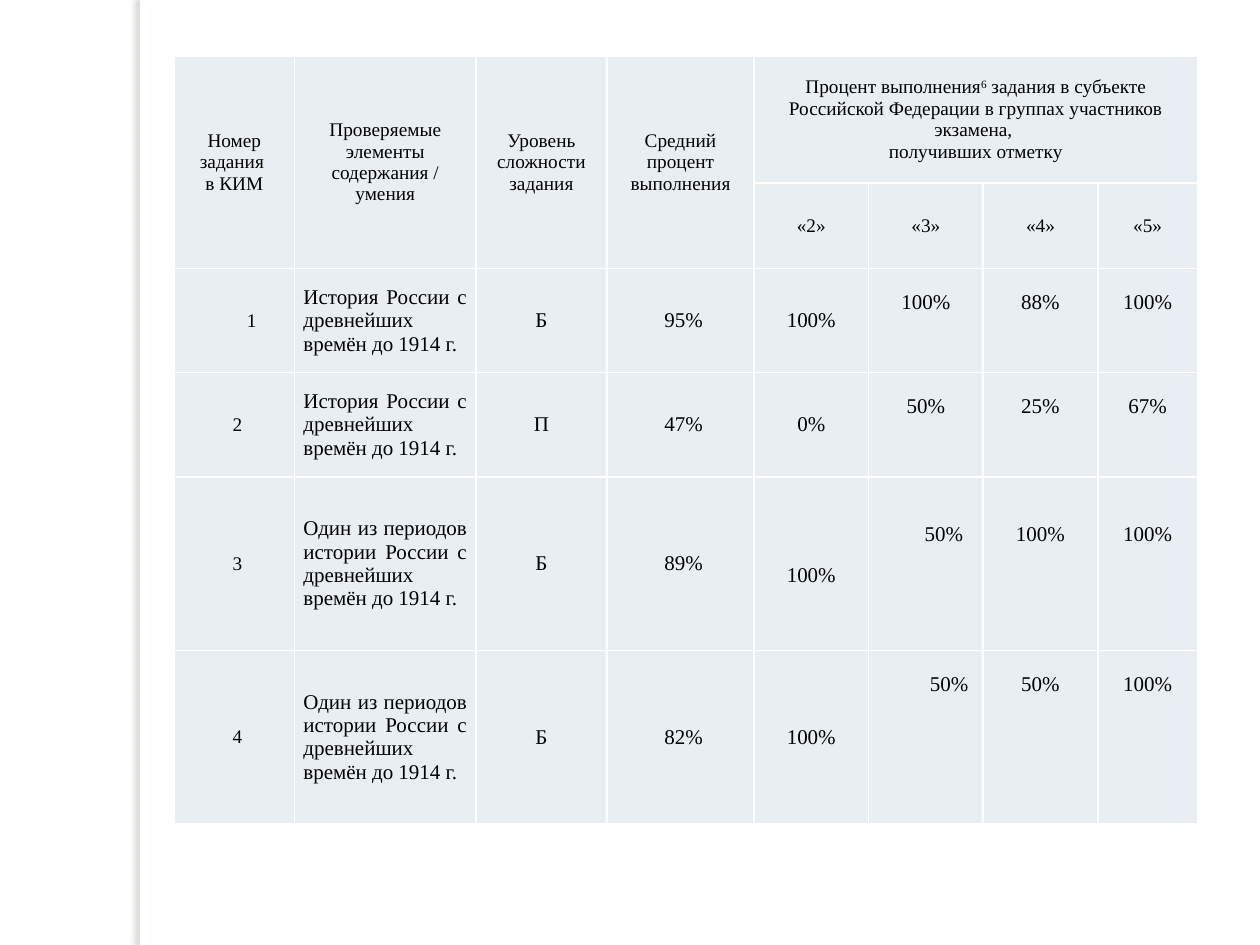
from lxml import etree
from pptx import Presentation
from pptx.dml.color import RGBColor
from pptx.enum.shapes import MSO_SHAPE
from pptx.enum.text import MSO_ANCHOR, PP_ALIGN
from pptx.oxml import parse_xml
from pptx.oxml.ns import nsdecls, qn
from pptx.util import Pt

RECTANGLE = MSO_SHAPE.RECTANGLE
TOP, MIDDLE = MSO_ANCHOR.TOP, MSO_ANCHOR.MIDDLE
LEFT, CENTER, JUSTIFY = PP_ALIGN.LEFT, PP_ALIGN.CENTER, PP_ALIGN.JUSTIFY

THEME = {
    "font": "Times New Roman", "head_size": 11, "body_size": 12,
    "text": "000000", "cell": "E8EEF1", "white": "FFFFFF", "shadow": "736F63",
}

# Each heading is a list of paragraphs, each paragraph a list of (text, is_superscript).
HEADINGS = [
    [[("Номер", False)], [("задания \vв КИМ", False)]],
    [[("Проверяемые элементы содержания / умения", False)]],
    [[("Уровень сложности задания", False)]],
    [[("Средний процент выполнения", False)]],
]
GROUP_HEADING = [[
    ("Процент выполнения", False), ("6", True),
    (" задания в субъекте Российской Федерации в группах участников экзамена, "
     "\vполучивших отметку", False),
]]
MARKS = ["«2»", "«3»", "«4»", "«5»"]
EARLY = "История России с древнейших времён до 1914 г."
PERIOD = "Один из периодов истории России с древнейших времён до 1914 г."
TASKS = [
    ("1", EARLY, "Б", "95%", "100%", "100%", "88%", "100%"),
    ("2", EARLY, "П", "47%", "0%", "50%", "25%", "67%"),
    ("3", PERIOD, "Б", "89%", "100%", "50%", "100%", "100%"),
    ("4", PERIOD, "Б", "82%", "100%", "50%", "50%", "100%"),
]

TABLE_LEFT, TABLE_TOP = 99.4, 32
COLUMN_WIDTHS = [69, 103.5, 75, 84, 65.5, 65.5, 65.5, 57]
ROW_HEIGHTS = [72.5, 49, 59.5, 59.5, 99.2, 99.2]
HEAD_ROWS = 2
FIRST_MARK = len(HEADINGS)
SIDE_MARGIN, INDENTED_MARGIN = 5, 8.6
TASK_TOP_MARGINS = [12.6, 12.6, 26.2, 12.6]

# Cells set apart from their column, keyed by (task index, column index).
EXCEPTIONS = {
    (0, 0): {"align": LEFT, "left": 41.7},
    (2, 4): {"top": 13.8},
    (2, 5): {"align": LEFT, "left": 32},
    (3, 5): {"align": LEFT, "left": 35},
}


def set_border(cell):
    properties = cell._tc.get_or_add_tcPr()
    for index, side in enumerate(("lnL", "lnR", "lnT", "lnB")):
        properties.insert(index, parse_xml(
            f'<a:{side} {nsdecls("a")} w="{Pt(1)}"><a:solidFill>'
            f'<a:srgbClr val="{THEME["white"]}"/></a:solidFill></a:{side}>'))


def add_span(para, text, size, superscript=False):
    span = para.add_run()
    span.text = text
    formats = {"name": THEME["font"], "size": Pt(size), "bold": False}
    for name, value in formats.items():
        setattr(span.font, name, value)
    span.font.color.rgb = RGBColor.from_string(THEME["text"])
    if superscript:
        span.font._element.set("baseline", "30000")


def write_cell(cell, paragraphs, size, align=CENTER, anchor=MIDDLE,
               left=SIDE_MARGIN, top=0):
    formats = {
        "vertical_anchor": anchor, "margin_left": Pt(left),
        "margin_right": Pt(SIDE_MARGIN), "margin_top": Pt(top), "margin_bottom": 0,
    }
    for name, value in formats.items():
        setattr(cell, name, value)
    for index, spans in enumerate(paragraphs):
        frame = cell.text_frame
        para = frame.add_paragraph() if index else frame.paragraphs[0]
        para.alignment = align
        for text, superscript in spans:
            for line_index, line in enumerate(text.split("\v")):
                if line_index:
                    para.add_line_break()
                add_span(para, line, size, superscript)


def add_side_strip(slide, height):
    strip = slide.shapes.add_shape(RECTANGLE, Pt(80), 0, Pt(5.8), height)
    strip.fill.solid()
    strip.fill.fore_color.rgb = RGBColor.from_string(THEME["white"])
    strip.line.fill.background()
    strip.shadow.inherit = False
    effects = strip._element.spPr.find(qn("a:effectLst"))
    shadow = etree.SubElement(effects, qn("a:outerShdw"), blurRad=str(Pt(3)),
                              dist=str(Pt(3)), dir="10800000", algn="tl",
                              rotWithShape="0")
    color = etree.SubElement(shadow, qn("a:srgbClr"), val=THEME["shadow"])
    etree.SubElement(color, qn("a:alpha"), val="25000")


def add_results_table(slide):
    table = slide.shapes.add_table(
        len(ROW_HEIGHTS), len(COLUMN_WIDTHS), Pt(TABLE_LEFT), Pt(TABLE_TOP),
        Pt(sum(COLUMN_WIDTHS)), Pt(sum(ROW_HEIGHTS))).table
    table.first_row = table.horz_banding = False
    for column, width in zip(table.columns, COLUMN_WIDTHS):
        column.width = Pt(width)
    for row, height in zip(table.rows, ROW_HEIGHTS):
        row.height = Pt(height)
    for cell in table.iter_cells():
        cell.fill.solid()
        cell.fill.fore_color.rgb = RGBColor.from_string(THEME["cell"])
        set_border(cell)
    return table


def fill_headings(table):
    size = THEME["head_size"]
    for column, heading in enumerate(HEADINGS):
        table.cell(0, column).merge(table.cell(HEAD_ROWS - 1, column))
        write_cell(table.cell(0, column), heading, size)
    table.cell(0, FIRST_MARK).merge(table.cell(0, len(COLUMN_WIDTHS) - 1))
    write_cell(table.cell(0, FIRST_MARK), GROUP_HEADING, size)
    for column, mark in enumerate(MARKS, FIRST_MARK):
        write_cell(table.cell(1, column), [[(mark, False)]], size)


def fill_tasks(table):
    for task_index, task in enumerate(TASKS):
        upper = {"anchor": TOP, "top": TASK_TOP_MARGINS[task_index]}
        indented = {"left": INDENTED_MARGIN}
        column_formats = [indented, {"align": JUSTIFY}, {}, indented, {},
                          upper, upper, upper]
        for column, text in enumerate(task):
            formats = {**column_formats[column],
                       **EXCEPTIONS.get((task_index, column), {})}
            size = THEME["body_size"] if column else THEME["head_size"]
            write_cell(table.cell(HEAD_ROWS + task_index, column),
                       [[(text, False)]], size, **formats)


def main():
    deck = Presentation()
    deck.slide_width, deck.slide_height = Pt(720), Pt(540)
    slide = deck.slides.add_slide(deck.slide_layouts[6])
    add_side_strip(slide, deck.slide_height)
    table = add_results_table(slide)
    fill_headings(table)
    fill_tasks(table)
    deck.save("out.pptx")


if __name__ == "__main__":
    main()
